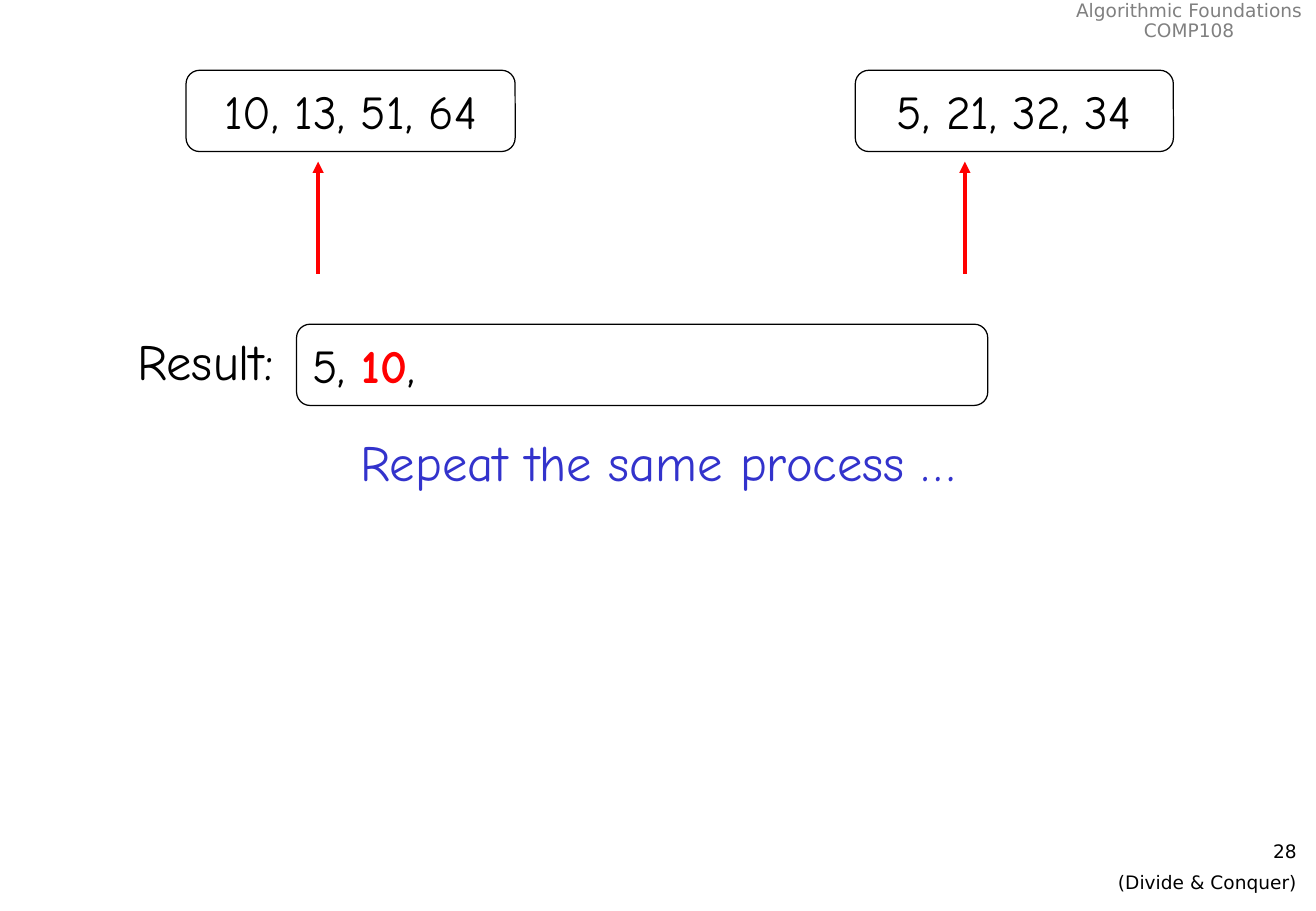
from pptx import Presentation
from pptx.dml.color import RGBColor
from pptx.enum.shapes import MSO_CONNECTOR, MSO_SHAPE
from pptx.enum.text import MSO_ANCHOR, PP_ALIGN
from pptx.oxml.ns import qn
from pptx.util import Cm, Pt
from lxml import etree

LEFT, CENTER, RIGHT = PP_ALIGN.LEFT, PP_ALIGN.CENTER, PP_ALIGN.RIGHT
MIDDLE, TOP = MSO_ANCHOR.MIDDLE, MSO_ANCHOR.TOP
ROUNDED, STRAIGHT = MSO_SHAPE.ROUNDED_RECTANGLE, MSO_CONNECTOR.STRAIGHT
BLANK_LAYOUT = 6
COLORS = {"black": "000000", "white": "FFFFFF", "red": "FF0000",
          "blue": "3333CC", "gray": "808080"}
HAND, SANS = "Comic Neue", "DejaVu Sans"
SLIDE_W, SLIDE_H = 27.51, 19.05
BOX_H = 1.7


def rgb(name):
    return RGBColor.from_string(COLORS[name])


class Deck:
    def __init__(self):
        self.prs = Presentation()
        self.prs.slide_width, self.prs.slide_height = Cm(SLIDE_W), Cm(SLIDE_H)
        self.s = self.prs.slides.add_slide(self.prs.slide_layouts[BLANK_LAYOUT])

    def style(self, r, size, font, color, bold=False):
        r.font.size, r.font.name, r.font.bold = Pt(size), font, bold
        r.font.color.rgb = rgb(color)

    def text(self, x, y, w, h, lines, size, align, font=HAND, color="black",
             spacing=1.0, gap=0):
        sp = self.s.shapes.add_textbox(Cm(x), Cm(y), Cm(w), Cm(h))
        tf = sp.text_frame
        tf.word_wrap, tf.vertical_anchor = True, TOP
        tf.text = "\n".join(lines)
        for i, p in enumerate(tf.paragraphs):
            p.alignment, p.line_spacing = align, spacing
            p.space_before = Pt(gap if i else 0)
            self.style(p.runs[0], size, font, color)
        return sp

    def list_box(self, x, y, w, parts, align=CENTER):
        """Rounded box; parts holds (text, color, bold) runs."""
        sp = self.s.shapes.add_shape(ROUNDED, Cm(x), Cm(y), Cm(w), Cm(BOX_H))
        sp.shadow.inherit = False
        sp.fill.solid()
        sp.fill.fore_color.rgb = rgb("white")
        sp.line.color.rgb, sp.line.width = rgb("black"), Pt(0.75)
        tf = sp.text_frame
        tf.word_wrap, tf.vertical_anchor = False, MIDDLE
        p = tf.paragraphs[0]
        p.alignment = align
        for text, color, bold in parts:
            r = p.add_run()
            r.text = text
            self.style(r, 28, HAND, color, bold)

    def arrow_up(self, x, bottom, top):
        c = self.s.shapes.add_connector(STRAIGHT, Cm(x), Cm(bottom), Cm(x), Cm(top))
        c.line.color.rgb, c.line.width = rgb("red"), Pt(2.25)
        etree.SubElement(c.line._get_or_add_ln(), qn("a:tailEnd"), type="triangle")
        etree.SubElement(c._element.spPr, qn("a:effectLst"))


def main():
    d = Deck()

    # Course header and page footer
    header = d.text(22.22, -0.1, 5.28, 1.09, ["Algorithmic Foundations", "COMP108"],
                    11, CENTER, SANS, "gray", spacing=0.9)
    header.text_frame.word_wrap = False
    d.text(21.62, 17.45, 5.74, 1.27, ["28", "(Divide & Conquer)"],
           11, RIGHT, SANS, gap=5)

    # Sorted halves, each with a pointer to its current number
    for x, w, numbers, pointer in ((3.89, 6.88, "10, 13, 51, 64", 6.65),
                                   (17.88, 6.65, "5, 21, 32, 34", 20.17)):
        d.list_box(x, 1.47, w, [(numbers, "black", False)])
        d.arrow_up(pointer, 5.72, 3.38)

    # Merged result so far
    d.text(0, 8.89, SLIDE_W, 1.55, ["Repeat the same process …"], 30, CENTER,
           color="blue")
    d.list_box(6.2, 6.78, 14.45, [("5, ", "black", False), ("10", "red", True),
                                  (",", "black", False)], LEFT)
    d.text(0.46, 6.78, 5.51, 1.55, ["Result:"], 30, RIGHT)

    d.prs.save("out.pptx")


if __name__ == "__main__":
    main()
